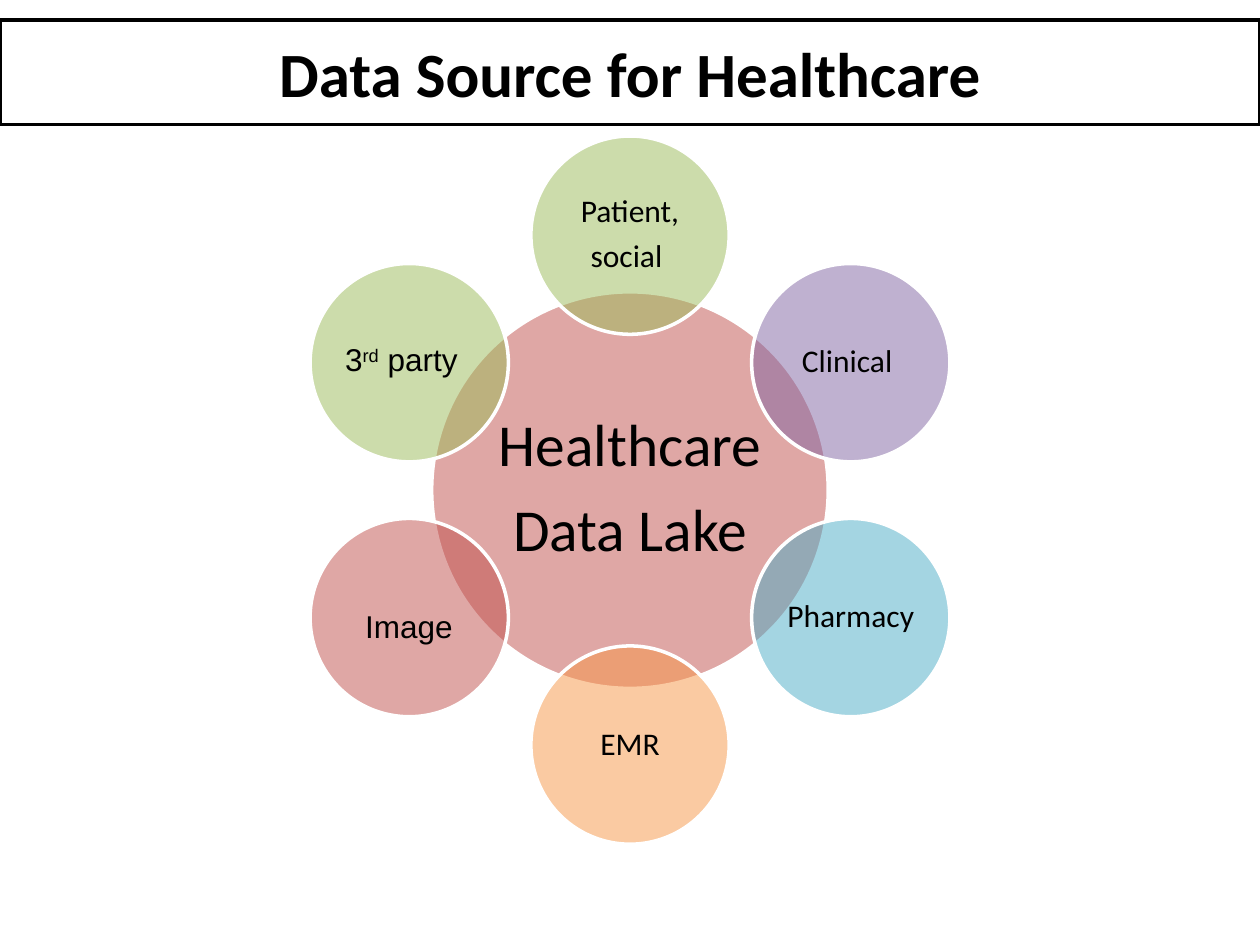
from dataclasses import dataclass
from math import cos, radians, sin

from lxml.etree import SubElement
from pptx import Presentation
from pptx.dml.color import RGBColor
from pptx.enum.shapes import MSO_SHAPE
from pptx.enum.text import MSO_ANCHOR, MSO_AUTO_SIZE, PP_ALIGN
from pptx.oxml.ns import qn
from pptx.util import Inches, Pt


@dataclass(frozen=True)
class Theme:
    ink: str = "000000"
    paper: str = "FFFFFF"
    red: str = "C0504D"
    green: str = "9BBB59"
    purple: str = "8064A2"
    teal: str = "4BACC6"
    orange: str = "F79646"
    font: str = "Calibri"
    plain: str = "Arial"
    head: int = 36
    core: int = 34
    label: int = 18
    line: float = 2


THEME = Theme()
PETALS = [
    (["Patient,", "social "], THEME.green),
    (["Clinical "], THEME.purple),
    (["Pharmacy "], THEME.teal),
    (["EMR"], THEME.orange),
    ([], THEME.red),
    ([], THEME.green),
]
TAGS = [
    ((2.8, 4.77, 0.9, 0.4), [("Image", 0)]),
    ((2.64, 2.65, 1.12, 0.4), [("3", 0), ("rd", 30), (" party", 0)]),
]


def add_run(para, text, size, font, bold=False, rise=0):
    run = para.add_run()
    run.text = text
    run.font.size = Pt(size)
    run.font.name = font
    run.font.bold = bold
    run.font.color.rgb = RGBColor.from_string(THEME.ink)
    if rise:
        run._r.get_or_add_rPr().set("baseline", str(rise * 1000))


def add_title(slide, box, text):
    title = slide.shapes.title
    title.left, title.top, title.width, title.height = map(Inches, box)
    title.line.color.rgb = RGBColor.from_string(THEME.ink)
    title.line.width = Pt(THEME.line)
    title.text_frame.vertical_anchor = MSO_ANCHOR.MIDDLE
    para = title.text_frame.paragraphs[0]
    para.alignment = PP_ALIGN.CENTER
    add_run(para, text, THEME.head, THEME.font, bold=True)


def add_disc(slide, x, y, width, color, lines, size, inset):
    half = width / 2
    box = map(Inches, (x - half, y - half, width, width))
    disc = slide.shapes.add_shape(MSO_SHAPE.OVAL, *box)
    disc.shadow.inherit = False
    disc.fill.solid()
    disc.fill.fore_color.rgb = RGBColor.from_string(color)
    tint = disc._element.spPr.find(qn("a:solidFill"))[0]
    SubElement(tint, qn("a:alpha")).set("val", "50000")
    disc.line.color.rgb = RGBColor.from_string(THEME.paper)
    disc.line.width = Pt(THEME.line)
    frame = disc.text_frame
    frame.word_wrap = True
    frame.vertical_anchor = MSO_ANCHOR.MIDDLE
    frame.margin_left = frame.margin_right = Inches(inset)
    frame.margin_top = frame.margin_bottom = Inches(inset)
    for i, text in enumerate(lines):
        para = frame.add_paragraph() if i else frame.paragraphs[0]
        para.alignment = PP_ALIGN.CENTER
        para.line_spacing = 0.9
        para.space_after = Pt(round(size * 0.35, 1))
        add_run(para, text, size, THEME.font)


def add_wheel(slide, box):
    left, top, width, height = box
    x, y = left + width / 2, top + height / 2
    small = height * 0.28
    reach = (height - small) / 2
    add_disc(slide, x, y, small * 2, THEME.red,
             ["Healthcare", "Data Lake"], THEME.core, 0.05)
    for i, (lines, color) in enumerate(PETALS):
        turn = radians(i * 360 / len(PETALS))
        add_disc(slide, x + reach * sin(turn), y - reach * cos(turn),
                 small, color, lines, THEME.label, 0.03)


def add_tag(slide, box, parts):
    tag = slide.shapes.add_textbox(*map(Inches, box))
    frame = tag.text_frame
    frame.word_wrap = False
    frame.auto_size = MSO_AUTO_SIZE.SHAPE_TO_FIT_TEXT
    for text, rise in parts:
        add_run(frame.paragraphs[0], text, THEME.label, THEME.plain, rise=rise)


def main():
    deck = Presentation()
    deck.slide_width, deck.slide_height = Inches(10), Inches(7.5)
    slide = deck.slides.add_slide(deck.slide_layouts[5])
    add_title(slide, (0, 0.16, 10, 0.83), "Data Source for Healthcare")
    add_wheel(slide, (2.46, 1.08, 5.08, 5.62))
    for box, parts in TAGS:
        add_tag(slide, box, parts)
    deck.save("out.pptx")


if __name__ == "__main__":
    main()
